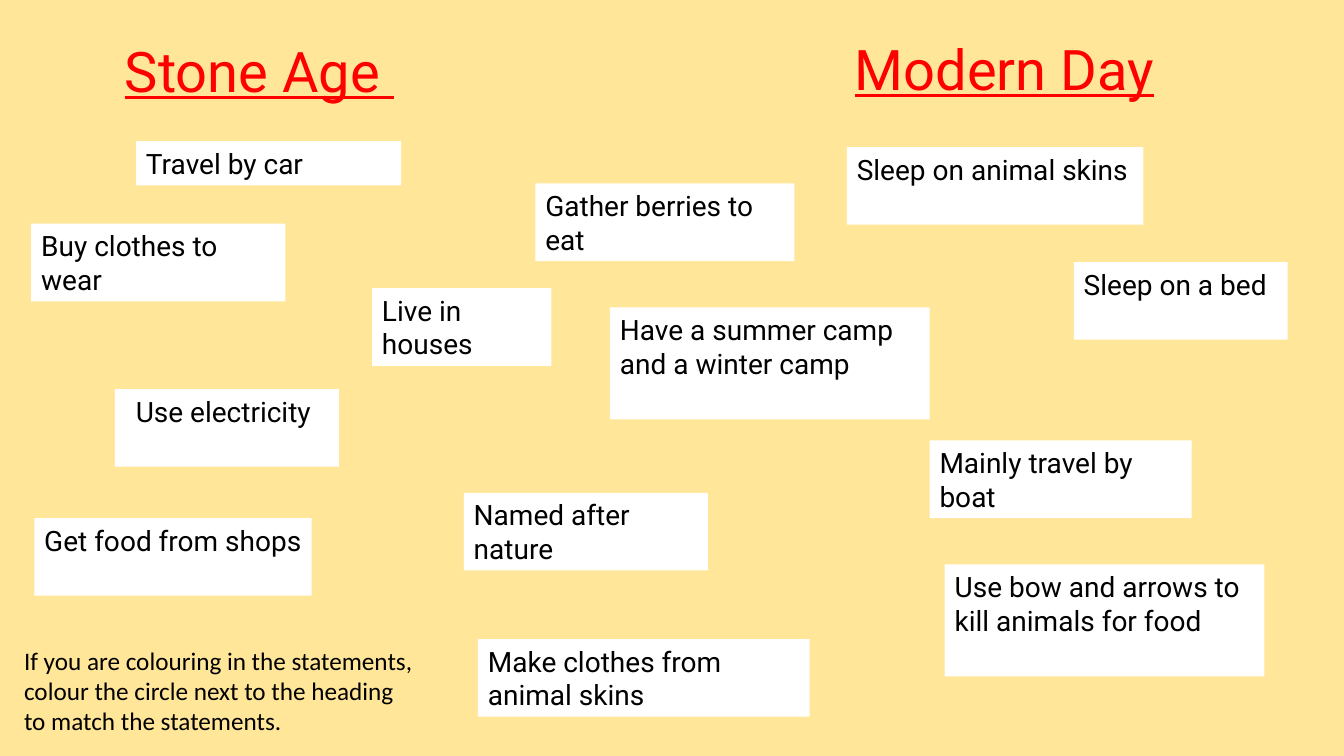
from pptx import Presentation
from pptx.dml.color import RGBColor
from pptx.enum.text import MSO_ANCHOR, MSO_AUTO_SIZE, PP_ALIGN
from pptx.util import Inches, Pt

SAND = RGBColor(0xFF, 0xE6, 0x99)
WHITE = RGBColor(0xFF, 0xFF, 0xFF)
BLACK = RGBColor(0x00, 0x00, 0x00)
RED = RGBColor(0xFF, 0x00, 0x00)

ONE_LINE, TWO_LINES, THREE_LINES = 0.44, 0.77, 1.11

# text, left, top, width, height
STATEMENTS = [
    ("Sleep on animal skins", 8.4, 1.46, 2.94, TWO_LINES),
    ("Sleep on a bed", 10.65, 2.6, 2.12, TWO_LINES),
    ("Gather berries to eat", 5.31, 1.82, 2.57, TWO_LINES),
    ("Make clothes from animal skins", 4.74, 6.34, 3.29, TWO_LINES),
    ("Buy clothes to wear", 0.31, 2.22, 2.52, TWO_LINES),
    ("Mainly travel by boat", 9.22, 4.37, 2.6, TWO_LINES),
    ("Travel by car", 1.35, 1.4, 2.63, ONE_LINE),
    ("Live in houses", 3.69, 2.86, 1.78, TWO_LINES),
    ("Get food from shops", 0.34, 5.14, 2.75, TWO_LINES),
    ("Use bow and arrows to kill animals for food", 9.37, 5.6, 3.17, THREE_LINES),
    ("Have a summer camp and a winter camp", 6.05, 3.05, 3.17, THREE_LINES),
    ("Named after nature", 4.6, 4.89, 2.42, TWO_LINES),
]


class SortingSlide:
    heading_font = "Roboto"
    note_font = "Calibri"

    def __init__(self, slide):
        self.slide = slide
        background = slide.background.fill
        background.solid()
        background.fore_color.rgb = SAND

    def text(self, words, left, top, width, height, font, size, color=BLACK):
        """Add a top-anchored, wrapping text box of fixed size."""
        box = self.slide.shapes.add_textbox(
            Inches(left), Inches(top), Inches(width), Inches(height))
        frame = box.text_frame
        frame.text = words
        frame.word_wrap = True
        frame.auto_size = MSO_AUTO_SIZE.NONE
        frame.vertical_anchor = MSO_ANCHOR.TOP
        style = frame.paragraphs[0].runs[0].font
        style.name = font
        style.size = Pt(size)
        style.color.rgb = color
        return box

    def heading(self, words, left, top, width):
        title = self.text(words, left, top, width, 0.77,
                          self.heading_font, 40, RED)
        title.text_frame.paragraphs[0].runs[0].font.underline = True

    def statement(self, words, left, top, width, height, align=PP_ALIGN.LEFT):
        card = self.text(words, left, top, width, height, self.heading_font, 20)
        card.fill.solid()
        card.fill.fore_color.rgb = WHITE
        card.text_frame.paragraphs[0].alignment = align

    def note(self, words, left, top, width, height):
        self.text(words, left, top, width, height, self.note_font, 18)


def main():
    deck = Presentation()
    deck.slide_width = Inches(13.33)
    deck.slide_height = Inches(7.5)
    sorting = SortingSlide(deck.slides.add_slide(deck.slide_layouts[6]))

    sorting.heading("Stone Age ", 1.14, 0.31, 3.71)
    sorting.heading("Modern Day", 8.38, 0.29, 4.23)
    sorting.note("If you are colouring in the statements, colour the circle "
                 "next to the heading to match the statements.",
                 0.14, 6.35, 4.11, 1.01)
    for statement in STATEMENTS:
        sorting.statement(*statement)
    sorting.statement("Use electricity ", 1.14, 3.86, 2.22, TWO_LINES,
                      PP_ALIGN.CENTER)

    deck.save("out.pptx")


if __name__ == "__main__":
    main()
